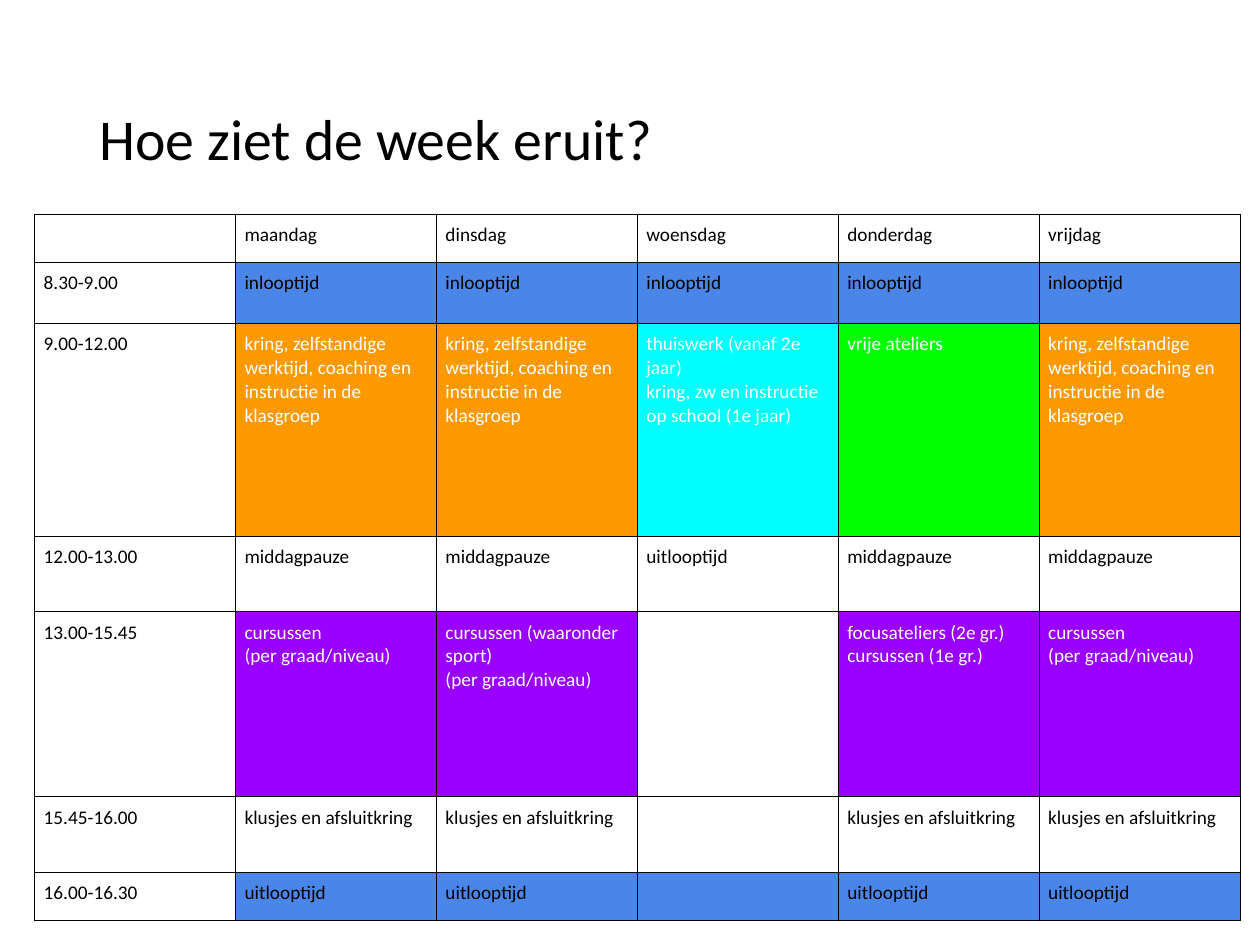
import pptx
import pptx.dml.color
import pptx.enum.text
import pptx.oxml
import pptx.oxml.ns
import pptx.util

Cm = pptx.util.Cm
Pt = pptx.util.Pt

THEME = {
    "font": "Calibri",
    "title": 33,
    "body": 11,
    "line": 0.75,
    "black": "000000",
    "white": "FFFFFF",
    "blue": "4A86E8",
    "orange": "FF9900",
    "cyan": "00FFFF",
    "green": "00FF00",
    "purple": "9900FF",
}
LIGHT = {"orange", "cyan", "green", "purple"}

TITLE = "Hoe ziet de week eruit?"
DAYS = ["maandag", "dinsdag", "woensdag", "donderdag", "vrijdag"]

START = ("inlooptijd", "blue")
CLASS = ("kring, zelfstandige werktijd, coaching en instructie in de klasgroep", "orange")
HOME = ("thuiswerk (vanaf 2e jaar)\nkring, zw en instructie op school (1e jaar)", "cyan")
FREE = ("vrije ateliers", "green")
LUNCH = ("middagpauze", None)
COURSE = ("cursussen\n(per graad/niveau)", "purple")
SPORT = ("cursussen (waaronder sport)\n(per graad/niveau)", "purple")
FOCUS = ("focusateliers (2e gr.)\ncursussen (1e gr.)", "purple")
CHORES = ("klusjes en afsluitkring", None)
LEAVE = ("uitlooptijd", "blue")
NONE = ("", None)

ROWS = [
    ("", 0.97, [(day, None) for day in DAYS]),
    ("8.30-9.00", 1.23, [START] * 5),
    ("9.00-12.00", 4.29, [CLASS, CLASS, HOME, FREE, CLASS]),
    ("12.00-13.00", 1.52, [LUNCH, LUNCH, ("uitlooptijd", None), LUNCH, LUNCH]),
    ("13.00-15.45", 3.73, [COURSE, SPORT, NONE, FOCUS, COURSE]),
    ("15.45-16.00", 1.52, [CHORES, CHORES, NONE, CHORES, CHORES]),
    ("16.00-16.30", 0.97, [LEAVE, LEAVE, ("", "blue"), LEAVE, LEAVE]),
]
LEFT, TOP, WIDE = 0.7, 4.32, 4.05
INSET = 0.18
PLAIN = "{2D5ABB26-0587-4C30-8999-92F81FD0307C}"


def paint(name):
    return pptx.dml.color.RGBColor.from_string(THEME[name])


def write(frame, text, size="body", color="black", space=1.0):
    frame.word_wrap = True
    for i, line in enumerate(text.split("\n")):
        para = frame.paragraphs[0] if i == 0 else frame.add_paragraph()
        para.line_spacing = space
        if not line:
            end = pptx.oxml.parse_xml(
                f'<a:endParaRPr {pptx.oxml.ns.nsdecls("a")} sz="{THEME[size] * 100}"/>'
            )
            para._p.append(end)
            continue
        run = para.add_run()
        run.text = line
        run.font.name = THEME["font"]
        run.font.size = Pt(THEME[size])
        run.font.color.rgb = paint(color)


def edge(cell):
    props = cell._tc.get_or_add_tcPr()
    for side in "LRTB":
        props.append(pptx.oxml.parse_xml(
            f'<a:ln{side} {pptx.oxml.ns.nsdecls("a")} w="{Pt(THEME["line"])}">'
            f'<a:solidFill><a:srgbClr val="{THEME["black"]}"/></a:solidFill></a:ln{side}>'
        ))


def style(cell, text, fill):
    cell.margin_left = cell.margin_right = Cm(INSET)
    cell.margin_top = cell.margin_bottom = Cm(INSET)
    edge(cell)
    if fill:
        cell.fill.solid()
        cell.fill.fore_color.rgb = paint(fill)
    else:
        cell.fill.background()
    write(cell.text_frame, text, color="white" if fill in LIGHT else "black")


def main():
    deck = pptx.Presentation()
    deck.slide_width, deck.slide_height = Cm(25.4), Cm(19.05)
    slide = deck.slides.add_slide(deck.slide_layouts[6])

    head = slide.shapes.add_textbox(Cm(1.75), Cm(1.02), Cm(21.9), Cm(3.68)).text_frame
    head.vertical_anchor = pptx.enum.text.MSO_ANCHOR.MIDDLE
    write(head, TITLE, size="title", space=0.9)

    count = len(DAYS) + 1
    high = sum(row[1] for row in ROWS)
    grid = slide.shapes.add_table(
        len(ROWS), count, Cm(LEFT), Cm(TOP), Cm(WIDE * count), Cm(high)
    ).table
    grid.first_row = grid.horz_banding = False
    grid._tbl.tblPr.find(pptx.oxml.ns.qn("a:tableStyleId")).text = PLAIN
    for col in grid.columns:
        col.width = Cm(WIDE)
    for r, (time, tall, items) in enumerate(ROWS):
        grid.rows[r].height = Cm(tall)
        for c, (text, fill) in enumerate([(time, None)] + items):
            style(grid.cell(r, c), text, fill)

    deck.save("out.pptx")


if __name__ == "__main__":
    main()
